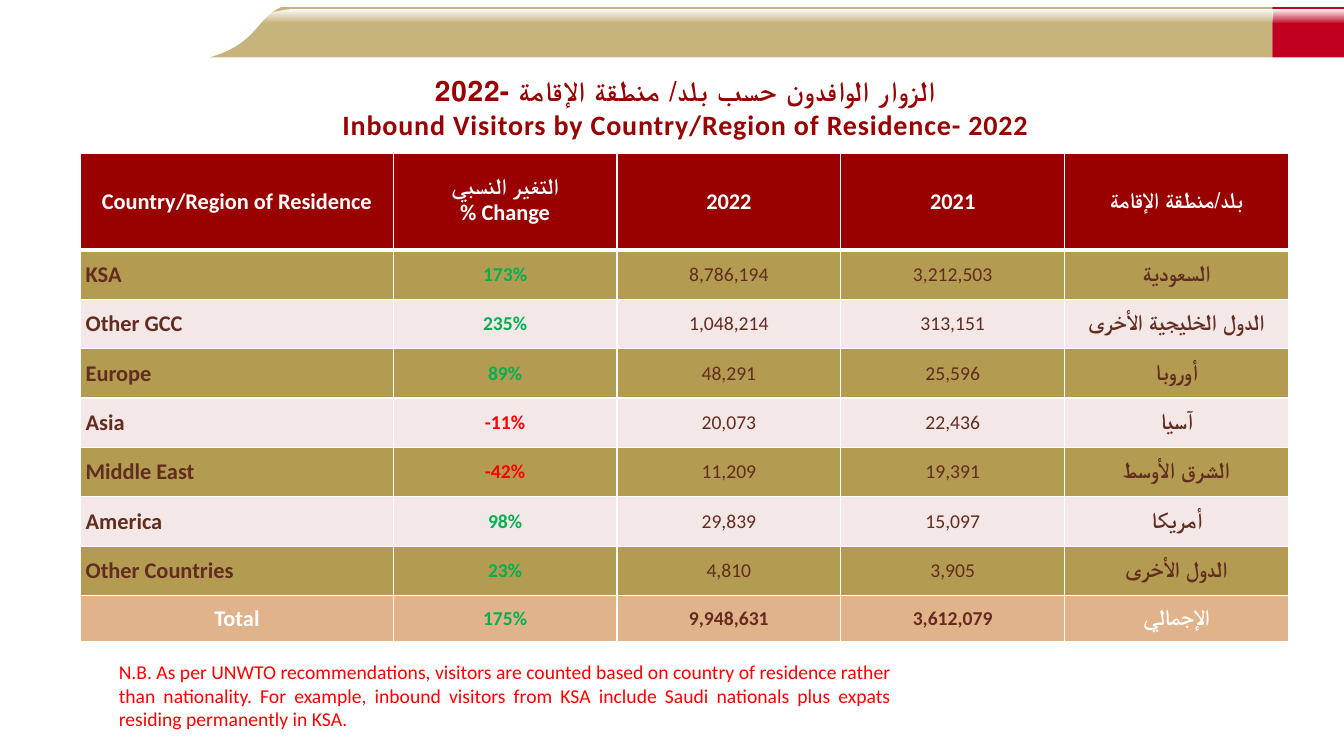
from lxml.etree import SubElement
from pptx import Presentation
from pptx.dml.color import RGBColor
from pptx.enum.shapes import MSO_SHAPE
from pptx.enum.text import MSO_ANCHOR, PP_ALIGN
from pptx.oxml.ns import qn
from pptx.util import Inches, Pt

COLORS = {
    "white": "FFFFFF", "maroon": "990000", "brown": "622C1F",
    "gold": "B39C51", "blush": "F4E7E8", "peach": "E1B38B",
    "banner": "C6B47C", "crimson": "C1001F",
    "green": "00B050", "red": "FF0000",
}
HEADERS = [
    "Country/Region of Residence", "التغير النسبي\n% Change",
    "2022", "2021", "بلد/منطقة الإقامة",
]
VISITORS = [
    ("KSA", "173%", "8,786,194", "3,212,503", "السعودية"),
    ("Other GCC", "235%", "1,048,214", "313,151", "الدول الخليجية الأخرى"),
    ("Europe", "89%", "48,291", "25,596", "أوروبا"),
    ("Asia", "-11%", "20,073", "22,436", "آسيا"),
    ("Middle East", "-42%", "11,209", "19,391", "الشرق الأوسط"),
    ("America", "98%", "29,839", "15,097", "أمريكا"),
    ("Other Countries", "23%", "4,810", "3,905", "الدول الأخرى"),
]
TOTAL = ("Total", "175%", "9,948,631", "3,612,079", "الإجمالي")
TITLE = ("الزوار الوافدون حسب بلد/ منطقة الإقامة -2022\n"
         "Inbound Visitors by Country/Region of Residence- 2022")
NOTE = ("N.B. As per UNWTO recommendations, visitors are counted based on "
        "country of residence rather than nationality. For example, inbound "
        "visitors from KSA include Saudi nationals plus expats residing "
        "permanently in KSA.")


def rgb(name):
    return RGBColor.from_string(COLORS[name])


def write_text(frame, text, size=16, color="brown", bold=False,
               align=PP_ALIGN.CENTER, rtl=False, spacing=0):
    for index, line in enumerate(text.split("\n")):
        paragraph = frame.add_paragraph() if index else frame.paragraphs[0]
        paragraph.alignment = align
        if rtl:
            paragraph._p.get_or_add_pPr().set("rtl", "1")
        run = paragraph.add_run()
        run.text = line
        run.font.name = "Calibri"
        run.font.size = Pt(size)
        run.font.bold = bold
        run.font.color.rgb = rgb(color)
        if spacing:
            run._r.get_or_add_rPr().set("spc", str(round(spacing * 100)))


def add_text(slide, left, top, width, height, text, **text_format):
    box = slide.shapes.add_textbox(
        Inches(left), Inches(top), Inches(width), Inches(height))
    box.text_frame.word_wrap = True
    write_text(box.text_frame, text, **text_format)


def paint(shape, color=None):
    shape.shadow.inherit = False
    shape.line.fill.background()
    if color:
        shape.fill.solid()
        shape.fill.fore_color.rgb = rgb(color)
        return
    shape.fill.gradient()
    shape.fill.gradient_angle = 270
    for stop in shape.fill.gradient_stops:
        stop.color.rgb = rgb("white")
    last_color = shape.fill._fill._gradFill.findall(".//" + qn("a:srgbClr"))[-1]
    SubElement(last_color, qn("a:alpha"), val="0")


def add_band(slide, curve, color=None, right=12.62, steps=24):
    points = []
    for step in range(steps + 1):
        t = step / steps
        weights = ((1 - t) ** 3, 3 * t * (1 - t) ** 2, 3 * t ** 2 * (1 - t), t ** 3)
        points.append(tuple(
            Inches(sum(weight * point[axis] for weight, point in zip(weights, curve)))
            for axis in (0, 1)))
    top, bottom = curve[-1][1], curve[0][1]
    builder = slide.shapes.build_freeform(Inches(right), Inches(top), scale=1)
    builder.add_line_segments([(Inches(right), Inches(bottom))] + points, close=True)
    paint(builder.convert_to_shape(), color)


def add_block(slide, left, top, width, height, color=None):
    block = slide.shapes.add_shape(
        MSO_SHAPE.RECTANGLE, Inches(left), Inches(top), Inches(width), Inches(height))
    paint(block, color)


def add_banner(slide):
    add_band(slide, [(2.08, 0.57), (2.56, 0.43), (2.53, 0.19), (2.79, 0.07)], "banner")
    add_block(slide, 12.62, 0.07, 0.71, 0.5, "crimson")
    add_band(slide, [(2.17, 0.21), (2.64, 0.17), (2.61, 0.12), (2.87, 0.09)])
    add_block(slide, 12.62, 0.09, 0.71, 0.13)


def set_borders(cell, **widths):
    properties = cell._tc.get_or_add_tcPr()
    for index, side in enumerate("LRTB"):
        line = properties.makeelement(
            qn("a:ln" + side), {"w": str(Pt(widths.get(side, 1)))})
        fill = SubElement(line, qn("a:solidFill"))
        SubElement(fill, qn("a:srgbClr"), val=COLORS["white"])
        properties.insert(index, line)


def fill_cell(cell, text, fill, **text_format):
    cell.fill.solid()
    cell.fill.fore_color.rgb = rgb(fill)
    cell.vertical_anchor = MSO_ANCHOR.MIDDLE
    write_text(cell.text_frame, text, **text_format)


def fill_body_row(cells, values, fill, is_total=False):
    label = {"size": 16, "bold": True, "color": "white" if is_total else "brown"}
    number = {"size": 14, "bold": is_total}
    change_color = "red" if values[1].startswith("-") else "green"
    name_align = PP_ALIGN.CENTER if is_total else PP_ALIGN.LEFT
    formats = [
        {**label, "align": name_align},
        {"size": 14, "bold": True, "color": change_color},
        number, number, label,
    ]
    for cell, value, text_format in zip(cells, values, formats):
        cell.margin_left = cell.margin_right = 0
        cell.margin_top = cell.margin_bottom = 0
        fill_cell(cell, value, fill, **text_format)
        set_borders(cell)
    if not is_total:
        cells[0].margin_left = Inches(0.05)


def add_visitor_table(slide):
    heights = [0.96] + [0.49] * len(VISITORS) + [0.46]
    widths = [3.1] + [2.22] * 4
    table = slide.shapes.add_table(
        len(heights), len(widths), Inches(0.8), Inches(1.52),
        Inches(sum(widths)), Inches(sum(heights))).table
    for column, width in zip(table.columns, widths):
        column.width = Inches(width)
    for row, height in zip(table.rows, heights):
        row.height = Inches(height)
    rows = [list(row.cells) for row in table.rows]
    for cell, header in zip(rows[0], HEADERS):
        fill_cell(cell, header, "maroon", color="white", bold=True)
        set_borders(cell, B=3)
    for index, values in enumerate(VISITORS):
        fill_body_row(rows[index + 1], values, ("gold", "blush")[index % 2])
    for cell in rows[1]:
        cell._tc.tcPr.find(qn("a:lnT")).set("w", str(Pt(3)))
    fill_body_row(rows[-1], TOTAL, "peach", is_total=True)


def main():
    presentation = Presentation()
    presentation.slide_width = Inches(13.33)
    presentation.slide_height = Inches(7.5)
    slide = presentation.slides.add_slide(presentation.slide_layouts[6])
    add_banner(slide)
    add_text(slide, 3.25, 0.68, 7.1, 0.77, TITLE, size=20, color="maroon",
             bold=True, rtl=True, spacing=0.6)
    add_visitor_table(slide)
    add_text(slide, 1.08, 6.5, 7.86, 0.81, NOTE, size=14, color="red",
             align=PP_ALIGN.JUSTIFY)
    presentation.save("out.pptx")


if __name__ == "__main__":
    main()
